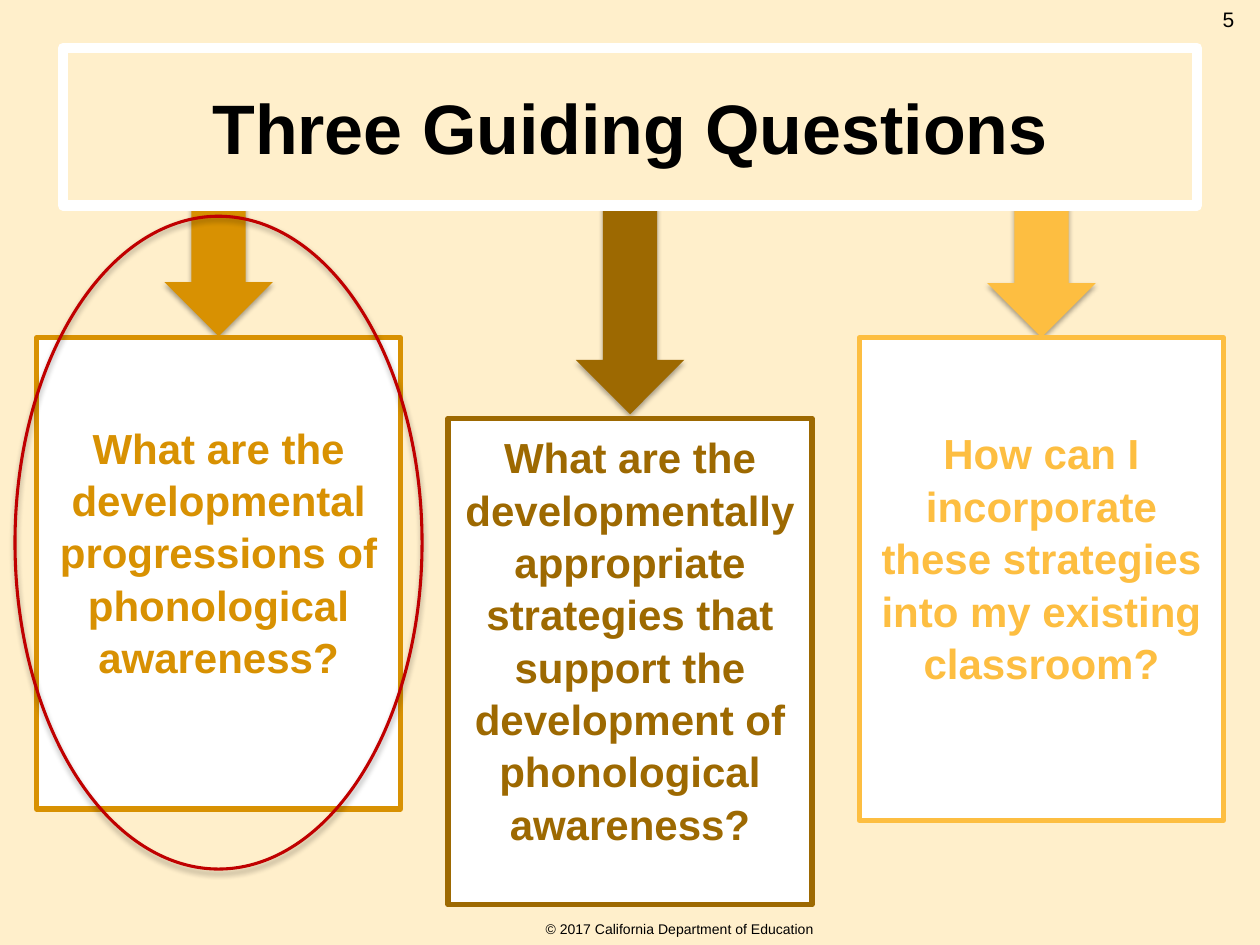
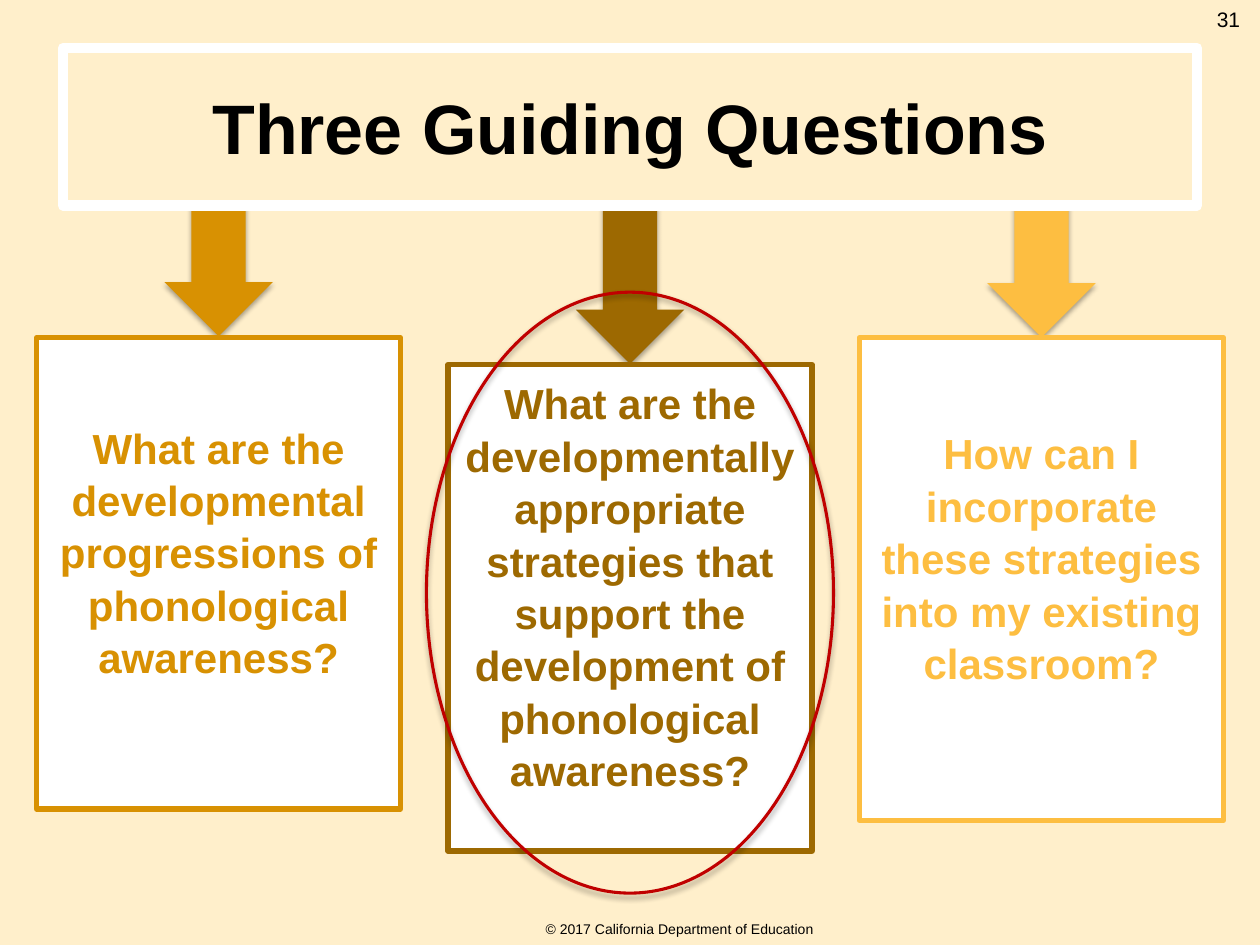
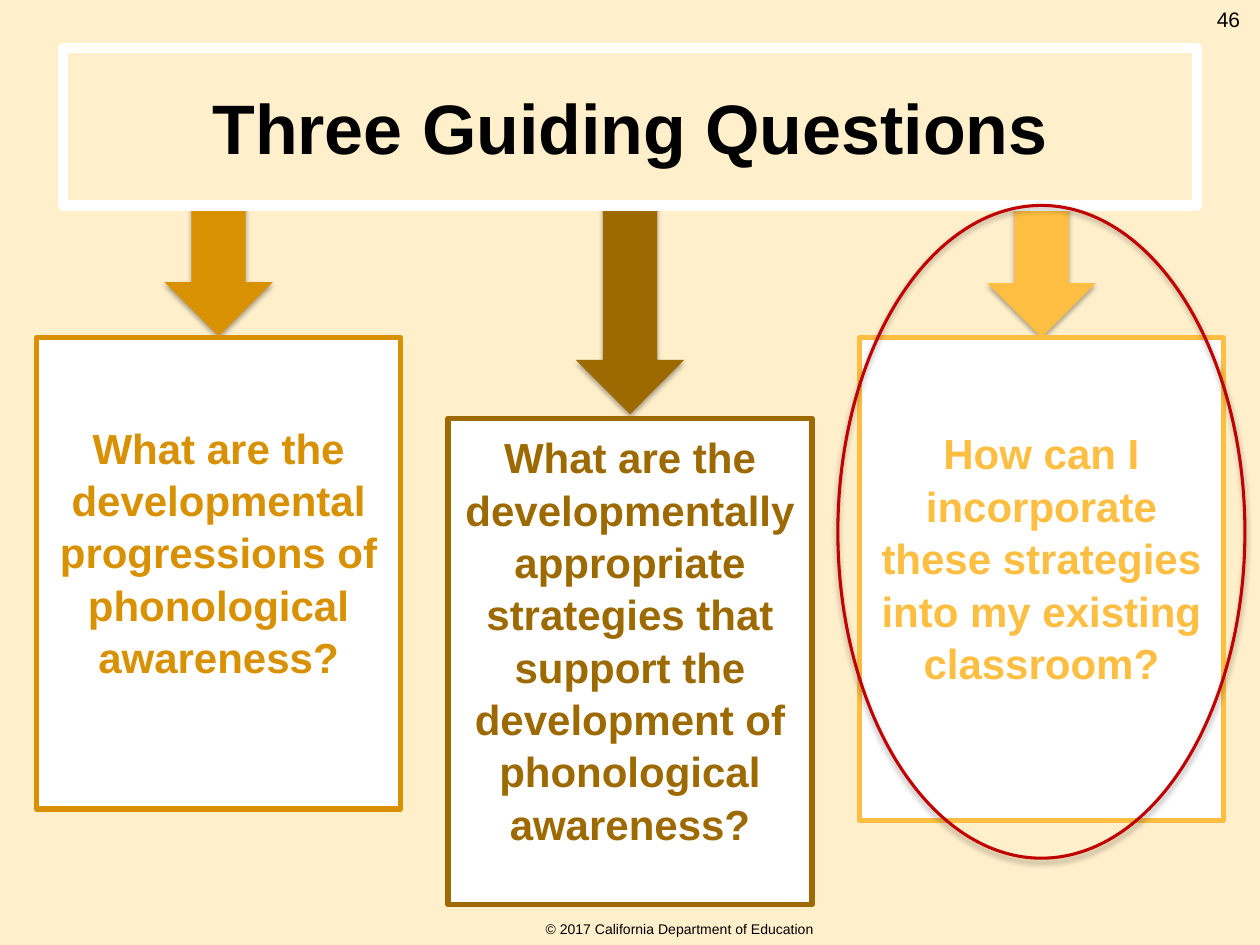
import pptx
import pptx.dml.color
import pptx.enum.shapes
import pptx.enum.text
import pptx.oxml
import pptx.util
from dataclasses import dataclass, replace

Pt = pptx.util.Pt
Shape = pptx.enum.shapes.MSO_SHAPE
Align = pptx.enum.text.PP_ALIGN
Anchor = pptx.enum.text.MSO_ANCHOR

FONT = "Arial"
BLACK = "000000"
WHITE = "FFFFFF"
CREAM = "FFEFCB"
RED = "C00000"
NAMESPACE = "http://schemas.openxmlformats.org/drawingml/2006/main"

TITLE_BOX = (36, 27.4, 648, 90)
NUMBER_BOX = (684, 0, 36, 28.8)
FOOTER_BOX = (56.9, 522, 663.1, 17.3)
COLUMN_LEFT = 20.9
COLUMN_PITCH = 235.1
COLUMN_WIDTH = 208
ARROW_TOP = 117.2
ARROW_WIDTH = 62
OVAL_WIDTH = 232.6


@dataclass
class Question:
    text: str
    colour: str
    top: float
    height: float
    arrow_length: float


DEVELOPMENT = Question(
    "What are the developmental progressions of phonological awareness?",
    "D89102", 193, 269.3, 75)
STRATEGIES = Question(
    "What are the developmentally appropriate strategies that support "
    "the development of phonological awareness?",
    "9D6901", 239, 278, 119.5)
RAISED_STRATEGIES = replace(STRATEGIES, top=208.3, arrow_length=90.7)
CLASSROOM = Question(
    "How can I incorporate these strategies into my existing classroom?",
    "FDBE41", 193, 275.8, 75.6)


def rgb(colour):
    return pptx.dml.color.RGBColor.from_string(colour)


def place(shape, box):
    shape.left, shape.top, shape.width, shape.height = map(Pt, box)


def paint(shape, fill=None, line=None, line_width=0):
    if fill:
        shape.fill.solid()
        shape.fill.fore_color.rgb = rgb(fill)
    else:
        shape.fill.background()
    if line:
        shape.line.color.rgb = rgb(line)
        shape.line.width = Pt(line_width)
    else:
        shape.line.fill.background()


def drop_shadow(shape):
    shape.shadow.inherit = False
    effects = shape.element.spPr.find(f"{{{NAMESPACE}}}effectLst")
    effects.append(pptx.oxml.parse_xml(
        f'<a:outerShdw xmlns:a="{NAMESPACE}" blurRad="{Pt(3.1)}" '
        f'dist="{Pt(1.8)}" dir="5400000" rotWithShape="0">'
        '<a:srgbClr val="000000"><a:alpha val="35000"/></a:srgbClr>'
        '</a:outerShdw>'))


def write(shape, text, size, colour=BLACK, bold=False, anchor=Anchor.MIDDLE):
    frame = shape.text_frame
    frame.word_wrap = True
    frame.auto_size = pptx.enum.text.MSO_AUTO_SIZE.NONE
    frame.vertical_anchor = anchor
    frame.text = text
    para = frame.paragraphs[0]
    properties = para._p.get_or_add_pPr()
    properties.set("marL", "0")
    properties.set("indent", "0")
    properties.append(pptx.oxml.parse_xml(f'<a:buNone xmlns:a="{NAMESPACE}"/>'))
    para.alignment = Align.CENTER
    para.space_before = Pt(0)
    para.font.name = FONT
    para.font.size = Pt(size)
    para.font.bold = bold
    para.font.color.rgb = rgb(colour)
    return para


def add_title(page, box):
    title = page.shapes.title
    place(title, box)
    paint(title, line=WHITE, line_width=6)
    write(title, "Three Guiding Questions", 40, bold=True)


def add_label(page, box, text, size, anchor):
    label = page.shapes.add_textbox(*map(Pt, box))
    write(label, text, size, anchor=anchor)


def add_arrow(page, centre, top, length, colour):
    box = (centre - length / 2, top + (length - ARROW_WIDTH) / 2,
           length, ARROW_WIDTH)
    arrow = page.shapes.add_shape(Shape.RIGHT_ARROW, *map(Pt, box))
    arrow.rotation = 90
    paint(arrow, fill=colour)
    drop_shadow(arrow)
    page.shapes.title.element.addprevious(arrow.element)


def add_question(page, placeholder, question, left):
    place(placeholder, (left, question.top, COLUMN_WIDTH, question.height))
    paint(placeholder, WHITE, question.colour, 3)
    para = write(placeholder, question.text, 24, question.colour, bold=True)
    para.line_spacing = 1.04
    placeholder.text_frame.margin_bottom = Pt(29)
    add_arrow(page, left + COLUMN_WIDTH / 2, ARROW_TOP,
              question.arrow_length, question.colour)


def add_oval(page, column, top, height):
    centre = COLUMN_LEFT + column * COLUMN_PITCH + COLUMN_WIDTH / 2
    box = (centre - OVAL_WIDTH / 2, top, OVAL_WIDTH, height)
    oval = page.shapes.add_shape(Shape.FLOWCHART_CONNECTOR, *map(Pt, box))
    paint(oval, line=RED, line_width=1.75)
    drop_shadow(oval)


def add_questions_page(deck, number, questions, column, oval_top, oval_height):
    page = deck.slides.add_slide(deck.slide_layouts.get_by_name("Comparison"))
    add_label(page, FOOTER_BOX, "© 2017 California Department of Education",
              8, Anchor.MIDDLE)
    add_title(page, TITLE_BOX)
    bodies = list(page.placeholders)[1:]
    for index, (body, question) in enumerate(zip(bodies, questions)):
        add_question(page, body, question, COLUMN_LEFT + index * COLUMN_PITCH)
    for spare in bodies[len(questions):]:
        spare.element.getparent().remove(spare.element)
    add_label(page, NUMBER_BOX, str(number), 12, Anchor.TOP)
    add_oval(page, column, oval_top, oval_height)


def main():
    deck = pptx.Presentation()
    deck.slide_width, deck.slide_height = Pt(720), Pt(540)
    background = deck.slide_master.background.fill
    background.solid()
    background.fore_color.rgb = rgb(CREAM)
    usual = (DEVELOPMENT, STRATEGIES, CLASSROOM)
    raised = (DEVELOPMENT, RAISED_STRATEGIES, CLASSROOM)
    add_questions_page(deck, 5, usual, 0, 123.6, 373)
    add_questions_page(deck, 31, raised, 1, 167, 343.4)
    add_questions_page(deck, 46, usual, 2, 117.4, 373)
    deck.save("out.pptx")


if __name__ == "__main__":
    main()
